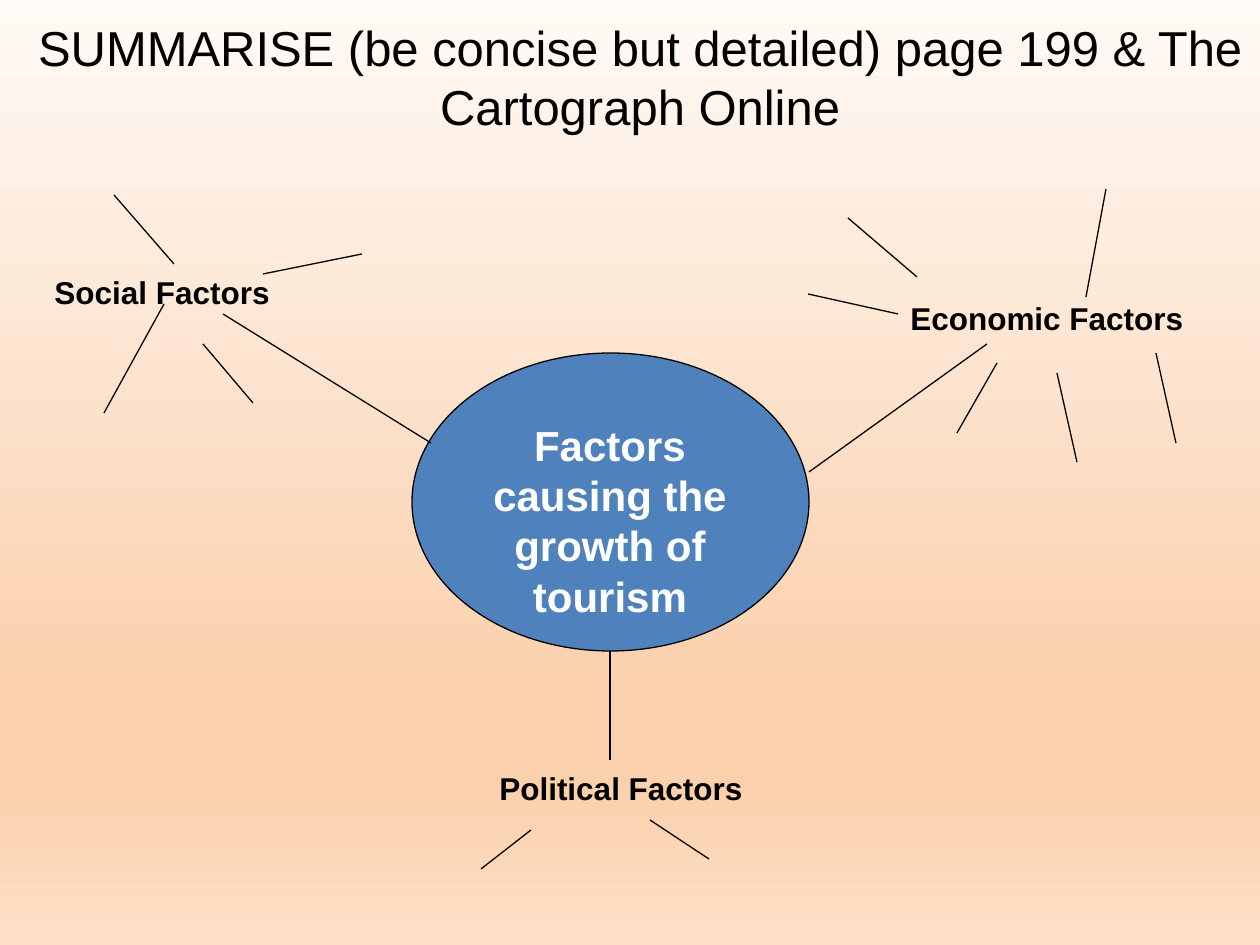
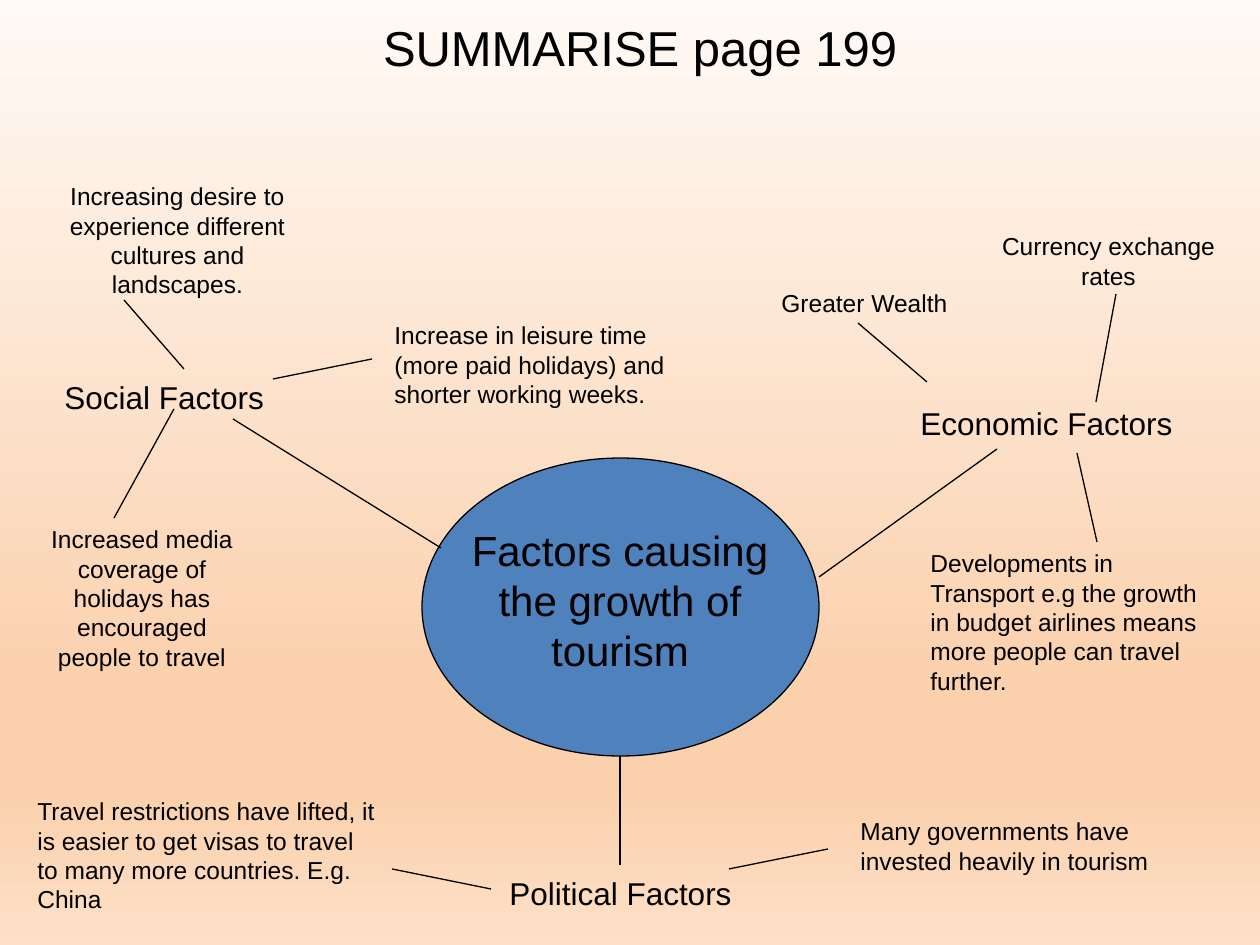
import pptx
import pptx.util
import pptx.dml.color
import pptx.enum.shapes
import pptx.enum.text
import pptx.oxml
import pptx.oxml.ns

COLORS = {"ink": "000000", "white": "FFFFFF", "hub": "4F81BD"}
BACKGROUND = [(0, "FFFAF6"), (74, "FBD0AC"), (83, "FBD0AC"), (100, "FDE0C7")]
FONT = "Arial"
PX = pptx.util.Inches(1) / 126
ONE_LINE = 60

HUB_TEXT = "Factors causing the growth of tourism"
HUB = (412, 353, 397, 298)
LABELS = [("Social Factors", 42, 267), ("Economic Factors", 898, 293), ("Political Factors", 487, 763)]
SPOKES = [(431, 443, 223, 314), (809, 472, 987, 344), (610, 651, 610, 760)]
TWIGS = [
    (263, 274, 362, 254), (164, 304, 104, 413), (174, 264, 114, 195),
    (917, 277, 848, 218), (1086, 297, 1106, 189),
]

SLIDES = [
    {
        "title": "SUMMARISE (be concise but detailed) page 199 & The Cartograph Online",
        "title_height": 131,
        "shift": (0, 0),
        "bold": True,
        "hub_color": "white",
        "hub_height": 217,
        "label_widths": [248, 305, 275],
        "twigs": [
            (1057, 373, 1077, 462), (481, 869, 531, 830), (709, 859, 650, 820),
            (253, 403, 203, 344), (898, 314, 808, 294), (997, 363, 957, 433),
            (1156, 353, 1176, 443),
        ],
        "notes": [],
    },
    {
        "title": "SUMMARISE page 199",
        "title_height": 72,
        "shift": (10, 105),
        "bold": False,
        "hub_color": "ink",
        "hub_height": 165,
        "label_widths": [232, 284, 254],
        "twigs": [(1077, 453, 1097, 542), (729, 869, 828, 849), (392, 869, 491, 889)],
        "notes": [
            ("Increase in leisure time (more paid holidays) and shorter working weeks.",
             (382, 314, 297, 102), False),
            ("Increased media coverage of holidays has encouraged people to travel",
             (32, 518, 220, 161), True),
            ("Increasing desire to experience different cultures and landscapes.",
             (32, 175, 291, 131), True),
            ("Greater Wealth", (769, 282, 196, 42), False),
            ("Currency exchange rates", (987, 225, 243, 72), True),
            ("Developments in Transport e.g the growth in budget airlines means more people can travel further.",
             (918, 542, 307, 161), False),
            ("Many governments have invested heavily in tourism", (848, 810, 367, 72), False),
            ("Travel restrictions have lifted, it is easier to get visas to travel to many more countries. E.g. China",
             (25, 790, 367, 131), False),
        ],
    },
]


def emu(*values):
    return [round(v * PX) for v in values]


def rgb(name):
    return pptx.dml.color.RGBColor.from_string(COLORS[name])


def paint_background(master):
    fill = master.background.fill
    fill.gradient()
    fill.gradient_angle = 270
    stops = master.element.find(".//" + pptx.oxml.ns.qn("a:gsLst"))
    for stop in list(stops):
        stops.remove(stop)
    for percent, color in BACKGROUND:
        stops.append(pptx.oxml.parse_xml(
            f'<a:gs {pptx.oxml.ns.nsdecls("a")} pos="{percent * 1000}"><a:srgbClr val="{color}"/></a:gs>'))


def outline(line):
    line.color.rgb = rgb("ink")
    line.width = pptx.util.Pt(0.75)


def add_text(s, text, box, size, center=False, color="ink", bold=False):
    tf = s.shapes.add_textbox(*emu(*box)).text_frame
    tf.word_wrap = box[3] > ONE_LINE
    tf.auto_size = pptx.enum.text.MSO_AUTO_SIZE.SHAPE_TO_FIT_TEXT
    p = tf.paragraphs[0]
    p.text = text
    p.alignment = pptx.enum.text.PP_ALIGN.CENTER if center else pptx.enum.text.PP_ALIGN.LEFT
    p.font.name = FONT
    p.font.size = pptx.util.Pt(size)
    p.font.bold = bold
    p.font.color.rgb = rgb(color)


def add_line(s, ends):
    c = s.shapes.add_connector(pptx.enum.shapes.MSO_CONNECTOR.STRAIGHT, *emu(*ends))
    outline(c.line)
    c.element.spPr.append(pptx.oxml.parse_xml(f'<a:effectLst {pptx.oxml.ns.nsdecls("a")}/>'))


def add_hub(s, box):
    sp = s.shapes.add_shape(pptx.enum.shapes.MSO_SHAPE.OVAL, *emu(*box))
    sp.shadow.inherit = False
    sp.fill.solid()
    sp.fill.fore_color.rgb = rgb("hub")
    outline(sp.line)


def build_slide(prs, spec):
    s = prs.slides.add_slide(prs.slide_layouts[6])
    dx, dy = spec["shift"]
    add_text(s, spec["title"], (0, 11, 1280, spec["title_height"]), 28, center=True)
    x, y, w, h = HUB
    add_hub(s, (x + dx, y + dy, w, h))
    add_text(s, HUB_TEXT, (x + dx + 29, y + dy + 60, 338, spec["hub_height"]), 24,
             center=True, color=spec["hub_color"], bold=spec["bold"])
    for (text, x, y), width in zip(LABELS, spec["label_widths"]):
        add_text(s, text, (x + dx, y + dy, width, 50), 18, bold=spec["bold"])
    for x1, y1, x2, y2 in SPOKES + TWIGS:
        add_line(s, (x1 + dx, y1 + dy, x2 + dx, y2 + dy))
    for ends in spec["twigs"]:
        add_line(s, ends)
    for text, box, center in spec["notes"]:
        add_text(s, text, box, 14, center=center)


def main():
    prs = pptx.Presentation()
    prs.slide_width, prs.slide_height = emu(1260, 945)
    paint_background(prs.slide_master)
    for spec in SLIDES:
        build_slide(prs, spec)
    prs.save("out.pptx")


if __name__ == "__main__":
    main()
